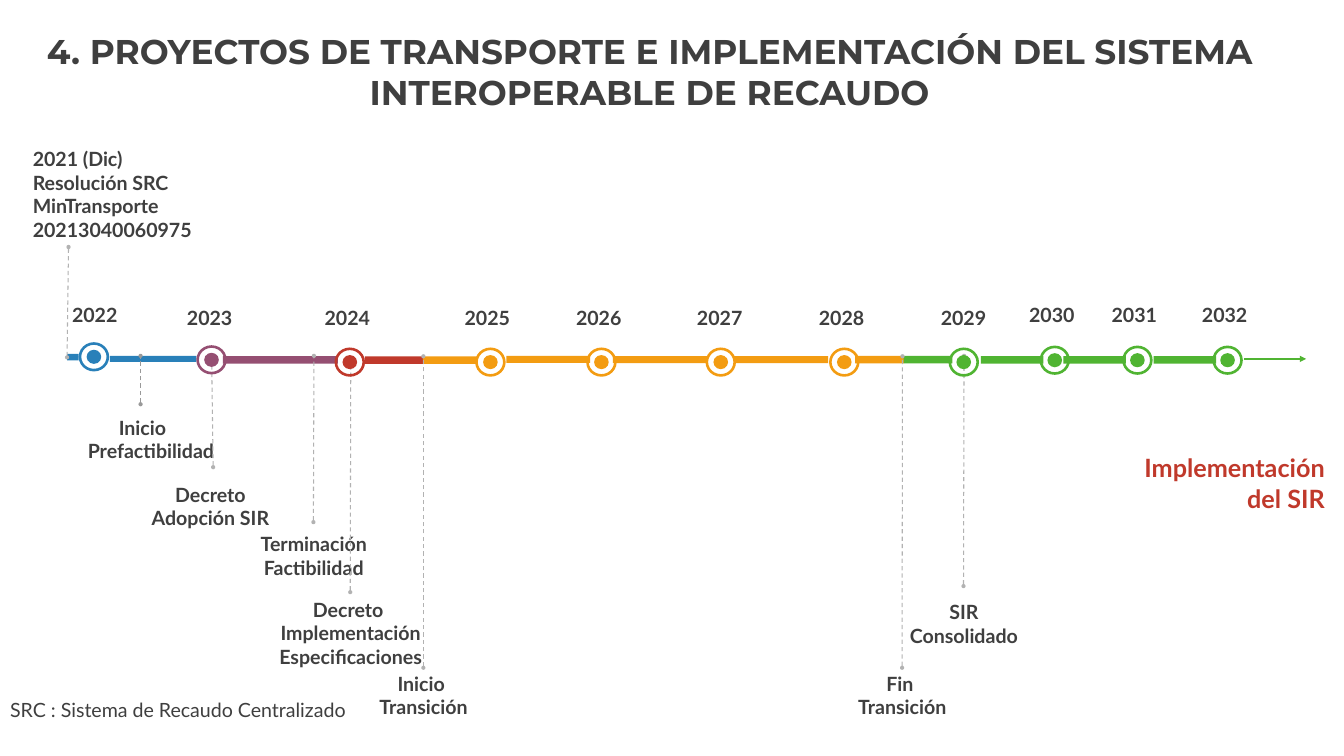
from lxml import etree
from pptx import Presentation
from pptx.dml.color import RGBColor
from pptx.enum.dml import MSO_LINE
from pptx.enum.shapes import MSO_CONNECTOR, MSO_SHAPE
from pptx.enum.text import MSO_ANCHOR, PP_ALIGN
from pptx.oxml.ns import qn
from pptx.util import Inches, Pt

LEFT, CENTER, RIGHT = PP_ALIGN.LEFT, PP_ALIGN.CENTER, PP_ALIGN.RIGHT
TOP, MIDDLE = MSO_ANCHOR.TOP, MSO_ANCHOR.MIDDLE
RECTANGLE, OVAL, DONUT = MSO_SHAPE.RECTANGLE, MSO_SHAPE.OVAL, MSO_SHAPE.DONUT
STRAIGHT, DASH = MSO_CONNECTOR.STRAIGHT, MSO_LINE.DASH

THEME = {
    "text": "3F3F3F", "leader": "B2B2B2", "dark leader": "999999",
    "blue": "2980B9", "purple": "954F72", "red": "C0392B",
    "orange": "F39C12", "green": "50B432",
    "title font": "Montserrat", "body font": "Lato",
    "title size": 49, "body size": 28, "callout size": 36,
}

# All places are percentages of the slide: x of its width, y of its height
WIDTH, HEIGHT = 26.67, 15
RING, DOT = (2.27, 3.87), (1.09, 1.87)
YEAR_SIZE = (5.29, 5.87)

TITLE = ("4. PROYECTOS DE TRANSPORTE E IMPLEMENTACIÓN DEL SISTEMA "
         "INTEROPERABLE DE RECAUDO")

# Start, end, middle height, thickness, colour
SEGMENTS = [
    (4.99, 5.85, 47.23, 0.87, "blue"),
    (8.17, 14.62, 47.47, 0.8, "blue"),
    (16.59, 25.14, 47.6, 1, "purple"),
    (27.15, 31.53, 47.63, 1, "red"),
    (31.46, 35.55, 47.63, 1, "orange"),
    (37.68, 43.91, 47.53, 0.93, "orange"),
    (45.61, 52.62, 47.57, 0.93, "orange"),
    (54.61, 61.62, 47.57, 0.93, "orange"),
    (63.63, 67.27, 47.57, 1, "orange"),
    (67.23, 70.87, 47.57, 1, "green"),
    (72.98, 77.63, 47.6, 1, "green"),
    (79.13, 83.78, 47.6, 1, "green"),
    (85.84, 90.49, 47.6, 1, "green"),
]

# Node centre x and y, left and top of the year label, colour; from 2022 on
FIRST_YEAR = 2022
NODES = [
    (6.99, 47.2, 4.61, 38.8, "blue"),
    (15.74, 47.6, 13.16, 39.13, "purple"),
    (26.03, 47.9, 23.4, 39.13, "red"),
    (36.49, 47.9, 33.82, 39.13, "orange"),
    (44.75, 47.9, 42.11, 39.13, "orange"),
    (53.63, 47.9, 51.11, 39.13, "orange"),
    (62.82, 47.9, 60.18, 39.13, "orange"),
    (71.71, 47.9, 69.25, 39.13, "green"),
    (78.48, 47.65, 75.82, 38.8, "green"),
    (84.63, 47.65, 81.96, 38.8, "green"),
    (91.34, 47.65, 88.68, 38.8, "green"),
]

# Lines of text, text box, leader from label to axis, alignments, leader colour
MILESTONES = [
    (["2021 (Dic)", "Resolución SRC MinTransporte 20213040060975"],
     (1.69, 18.13, 14.59, 15.27), (5.1, 32.67, 4.99, 47.27), [LEFT, LEFT], "leader"),
    (["Inicio ", "Prefactibilidad"],
     (4.87, 53.67, 11.81, 9), (10.46, 53.47, 10.46, 47.07), [CENTER, RIGHT], "dark leader"),
    (["Decreto", "Adopción SIR"],
     (9.75, 62.53, 11.81, 9), (15.86, 61.8, 15.75, 47.4), [CENTER] * 2, "leader"),
    (["Terminación", "Factibilidad"],
     (17.44, 69.07, 11.81, 9), (23.32, 69.07, 23.36, 47.07), [CENTER] * 2, "leader"),
    (["Decreto ", "Implementación", "Especificaciones"],
     (19.09, 77.73, 13.99, 12.13), (26.06, 78.33, 26.1, 47.73), [CENTER] * 3, "leader"),
    (["Inicio ", "Transición"],
     (24.52, 87.53, 13.99, 9), (31.5, 88.33, 31.5, 47.13), [CENTER] * 2, "leader"),
    (["Fin ", "Transición"],
     (60.14, 87.53, 13.99, 9), (67.12, 88.33, 67.15, 47.13), [CENTER] * 2, "leader"),
    (["SIR", "Consolidado"],
     (64.72, 78.07, 13.99, 9), (71.69, 77.53, 71.73, 47.07), [CENTER] * 2, "leader"),
]


def across(share):
    return Inches(WIDTH * share / 100)


def down(share):
    return Inches(HEIGHT * share / 100)


def place(left, top, width, height):
    return across(left), down(top), across(width), down(height)


def color(name):
    return RGBColor.from_string(THEME[name])


def add_text(slide, lines, box, *, size="body size", font="body font", fill="text",
             bold=True, aligns=(LEFT,), anchor=TOP, margin=0.2):
    frame = slide.shapes.add_textbox(*place(*box)).text_frame
    frame.word_wrap = True
    frame.vertical_anchor = anchor
    frame.margin_left = frame.margin_right = Inches(0.2)
    frame.margin_top = frame.margin_bottom = Inches(margin)
    for index, (line, align) in enumerate(zip(lines, aligns)):
        paragraph = frame.add_paragraph() if index else frame.paragraphs[0]
        paragraph.alignment = align
        run = paragraph.add_run()
        run.text = line
        run.font.name = THEME[font]
        run.font.size = Pt(THEME[size])
        run.font.bold = bold
        run.font.color.rgb = color(fill)


def add_filled(shapes, kind, center_x, center_y, width, height, fill):
    shape = shapes.add_shape(kind, *place(
        center_x - width / 2, center_y - height / 2, width, height))
    shape.shadow.inherit = False
    shape.fill.solid()
    shape.fill.fore_color.rgb = color(fill)
    shape.line.fill.background()
    return shape


def add_line(slide, x1, y1, x2, y2, fill, width, ends, dash=None):
    connector = slide.shapes.add_connector(
        STRAIGHT, across(x1), down(y1), across(x2), down(y2))
    connector.line.color.rgb = color(fill)
    connector.line.width = Pt(width)
    if dash:
        connector.line.dash_style = dash
    outline = connector.line._get_or_add_ln()
    for tag, kind in ends.items():
        etree.SubElement(outline, qn(tag), type=kind)
    etree.SubElement(connector._element.spPr, qn("a:effectLst"))


def main():
    presentation = Presentation()
    presentation.slide_width, presentation.slide_height = Inches(WIDTH), Inches(HEIGHT)
    slide = presentation.slides.add_slide(presentation.slide_layouts[6])

    add_text(slide, [TITLE], (0.45, 5.4, 95.76, 8.07), size="title size",
             font="title font", aligns=[CENTER], anchor=MIDDLE, margin=0.1)

    # Axis
    for start, end, middle, thickness, fill in SEGMENTS:
        add_filled(slide.shapes, RECTANGLE, (start + end) / 2, middle,
                   end - start, thickness, fill)
    add_line(slide, 92.58, 47.47, 97.19, 47.47, "green", 3, {"a:tailEnd": "triangle"})

    # Milestones with their leaders
    for lines, box, leader, aligns, fill in MILESTONES:
        add_line(slide, *leader, fill, 1.5,
                 {"a:headEnd": "oval", "a:tailEnd": "oval"}, DASH)
        add_text(slide, lines, box, aligns=aligns)

    # Year nodes
    for year, (x, y, left, top, fill) in enumerate(NODES, FIRST_YEAR):
        node = slide.shapes.add_group_shape()
        add_filled(node.shapes, OVAL, x, y, *DOT, fill)
        ring = add_filled(node.shapes, DONUT, x, y, *RING, fill)
        ring.adjustments[0] = 0.09
        add_text(slide, [str(year)], (left, top, *YEAR_SIZE))

    # Callout and abbreviation
    add_text(slide, ["Implementación del SIR"], (83.5, 58.53, 15.82, 10.8),
             size="callout size", fill="red", aligns=[RIGHT])
    add_text(slide, ["SRC : Sistema de Recaudo Centralizado"],
             (0, 91, 27.15, 5.87), bold=False)

    presentation.save("out.pptx")


if __name__ == "__main__":
    main()
